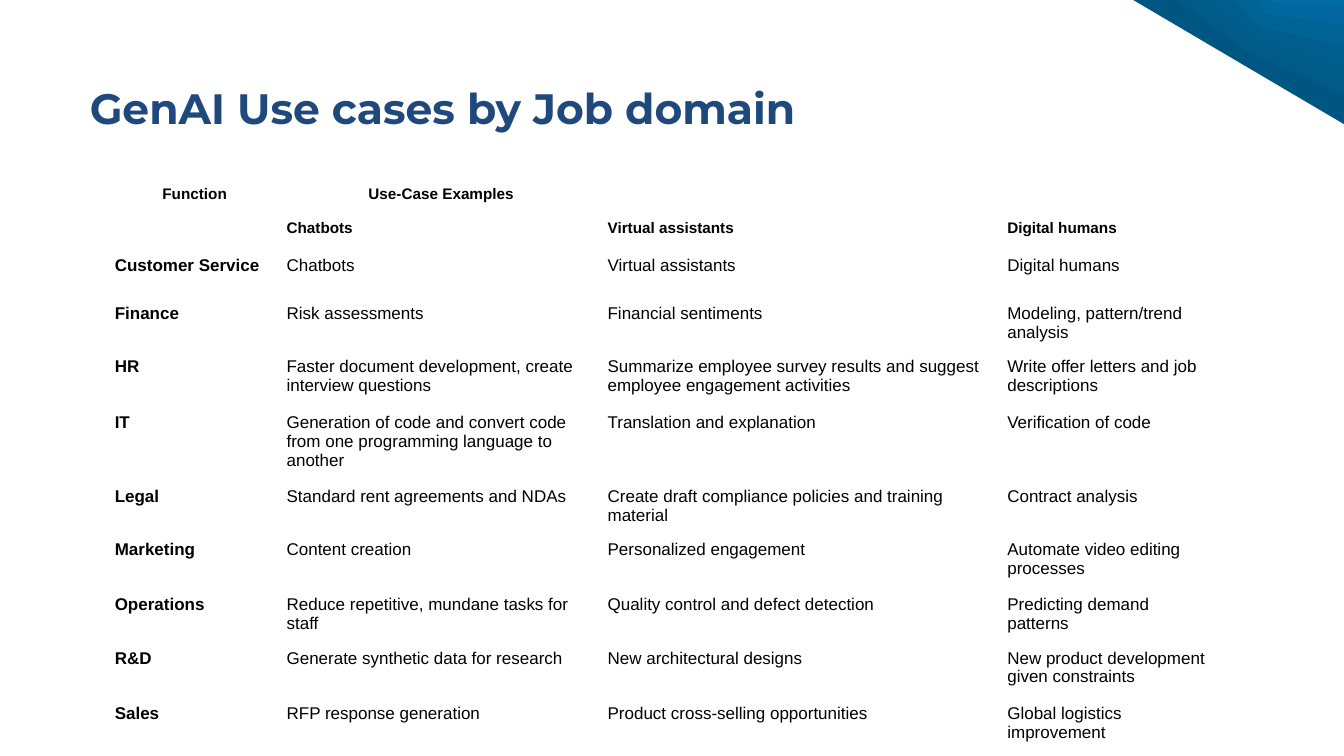
import pptx
import pptx.dml.color
import pptx.enum.text
import pptx.util
from pptx.util import Cm

COLOURS = {
    "title": "1F497D",
    "text": "000000",
    "facet 1": "005682",
    "facet 2": "005B89",
    "facet 3": "005E8E",
    "facet 4": "006396",
    "facet 5": "00689E",
    "facet 6": "006DA5",
}
WIDTH, HEIGHT = 55.85, 31.42
FACETS = [
    [(47.09, 0), (WIDTH, 5.16)],
    [(48.92, 0), (51.71, 2.06), (WIDTH, 3.94)],
    [(50.27, 0), (51.99, 1.57), (WIDTH, 2.87)],
    [(51.31, 0), (52.27, 1.09), (WIDTH, 1.91)],
    [(52.12, 0), (52.58, 0.58), (WIDTH, 1.02)],
    [(52.81, 0), (52.86, 0.1), (WIDTH, 0.23)],
]
COLUMN_WIDTHS = [7.14, 13.34, 16.61, 9.07]
ROW_HEIGHTS = [1.52, 1.52, 2.01, 2.21, 2.31, 3.07, 2.21, 2.31, 2.21, 2.31, 2.21]
HEADER_ROWS = 2
USE_CASES = [
    ["Function", "Use-Case Examples", "", ""],
    ["", "Chatbots", "Virtual assistants", "Digital humans"],
    ["Customer Service", "Chatbots", "Virtual assistants", "Digital humans"],
    ["Finance", "Risk assessments", "Financial sentiments",
     "Modeling, pattern/trend analysis"],
    ["HR", "Faster document development, create interview questions",
     "Summarize employee survey results and suggest employee engagement activities",
     "Write offer letters and job descriptions"],
    ["IT", "Generation of code and convert code from one programming language to another",
     "Translation and explanation", "Verification of code"],
    ["Legal", "Standard rent agreements and NDAs",
     "Create draft compliance policies and training material", "Contract analysis"],
    ["Marketing", "Content creation", "Personalized engagement",
     "Automate video editing processes"],
    ["Operations", "Reduce repetitive, mundane tasks for staff",
     "Quality control and defect detection", "Predicting demand patterns"],
    ["R&D", "Generate synthetic data for research", "New architectural designs",
     "New product development given constraints"],
    ["Sales", "RFP response generation", "Product cross-selling opportunities",
     "Global logistics improvement"],
]


def apply(target, values):
    """Set each attribute of the target from a dict of format values."""
    for attribute, value in values.items():
        setattr(target, attribute, value)


class Deck:
    """Holds the presentation style and the current slide."""

    def __init__(self):
        """Open a presentation with one title-only slide."""
        self.presentation = pptx.Presentation()
        apply(self.presentation, {"slide_width": Cm(WIDTH), "slide_height": Cm(HEIGHT)})
        self.slide = self.presentation.slides.add_slide(self.presentation.slide_layouts[5])

    def colour(self, role):
        """Return the colour of a named role."""
        return pptx.dml.color.RGBColor.from_string(COLOURS[role])

    def add_wording(self, paragraph, wording, role, name, size, bold):
        """Add one formatted run to a paragraph."""
        run = paragraph.add_run()
        run.text = wording
        apply(run.font, {"name": name, "size": pptx.util.Pt(size), "bold": bold})
        run.font.color.rgb = self.colour(role)

    def facet(self, role, edge):
        """Draw a corner facet from its lower left edge."""
        outline = [(Cm(x), Cm(y)) for x, y in edge]
        builder = self.slide.shapes.build_freeform(Cm(WIDTH), 0)
        builder.add_line_segments(outline, close=True)
        facet = builder.convert_to_shape()
        facet.shadow.inherit = False
        facet.fill.solid()
        facet.fill.fore_color.rgb = self.colour(role)
        facet.line.fill.background()

    def title(self, wording):
        """Place and format the slide title."""
        heading = self.slide.shapes.title
        apply(heading, {"left": Cm(3.73), "top": Cm(3.4),
                        "width": Cm(47.88), "height": Cm(2.13)})
        apply(heading.text_frame, {
            "margin_left": 0, "margin_top": 0, "margin_right": 0, "margin_bottom": 0,
            "word_wrap": True,
            "vertical_anchor": pptx.enum.text.MSO_ANCHOR.TOP,
            "auto_size": pptx.enum.text.MSO_AUTO_SIZE.SHAPE_TO_FIT_TEXT,
        })
        paragraph = heading.text_frame.paragraphs[0]
        paragraph.alignment = pptx.enum.text.PP_ALIGN.LEFT
        self.add_wording(paragraph, wording, "title", "Montserrat", 50, True)

    def cell(self, cell, wording, row, column):
        """Format and fill one table cell."""
        cell.fill.background()
        inset = Cm(0.25)
        apply(cell, {"margin_left": inset, "margin_top": inset,
                     "margin_right": inset, "margin_bottom": inset})
        if not wording:
            return
        paragraph = cell.text_frame.paragraphs[0]
        if row == 0:
            apply(paragraph, {"alignment": pptx.enum.text.PP_ALIGN.CENTER,
                              "line_spacing": 1.15})
        header = row < HEADER_ROWS
        self.add_wording(paragraph, wording, "text", "Arial",
                         18 if header else 20, header or column == 0)

    def table(self, rows, left, top):
        """Add the use-case table."""
        table = self.slide.shapes.add_table(
            len(rows), len(COLUMN_WIDTHS), Cm(left), Cm(top),
            Cm(sum(COLUMN_WIDTHS)), Cm(sum(ROW_HEIGHTS))).table
        apply(table, {"first_row": False, "horz_banding": False})
        for column, width in zip(table.columns, COLUMN_WIDTHS):
            column.width = Cm(width)
        for row, height in zip(table.rows, ROW_HEIGHTS):
            row.height = Cm(height)
        for row, wordings in enumerate(rows):
            for column, wording in enumerate(wordings):
                self.cell(table.cell(row, column), wording, row, column)


def main():
    """Build and save the slide."""
    deck = Deck()
    for number, edge in enumerate(FACETS, 1):
        deck.facet(f"facet {number}", edge)
    deck.title("GenAI Use cases by Job domain")
    deck.table(USE_CASES, 4.52, 7.34)
    deck.presentation.save("out.pptx")


if __name__ == "__main__":
    main()
